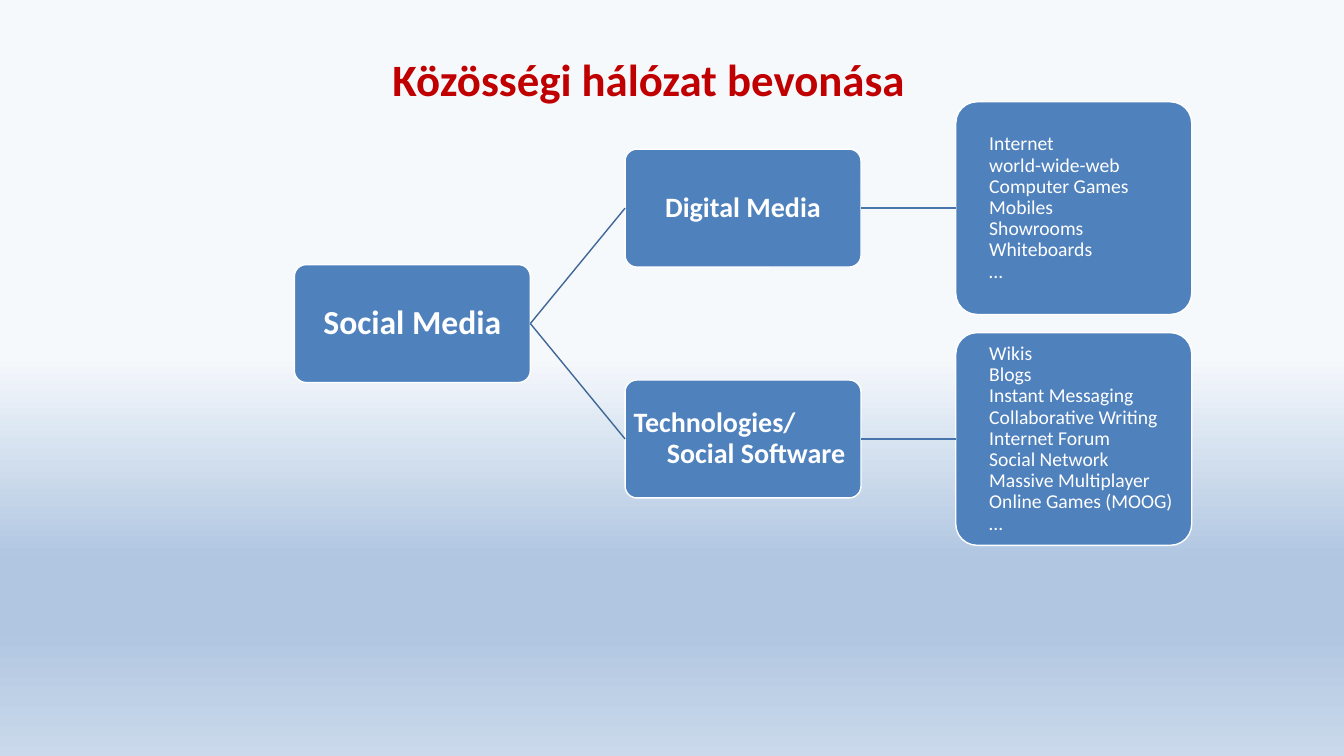
from copy import deepcopy
from dataclasses import dataclass

from lxml import etree
from pptx import Presentation
from pptx.dml.color import RGBColor
from pptx.enum.shapes import MSO_CONNECTOR, MSO_SHAPE
from pptx.enum.text import MSO_ANCHOR, PP_ALIGN
from pptx.oxml.ns import qn
from pptx.shapes.autoshape import Shape
from pptx.slide import Slide
from pptx.text.text import _Paragraph as Paragraph
from pptx.util import Inches, Pt

FONT = "Calibri"
COLORS = {
    "title": "C00000",
    "box": "4F81BD",
    "white": "FFFFFF",
    "branch": "3F6797",
    "leaf": "4875AC",
}
BACKGROUND = ((0.47, "F6F9FC"), (0.74, "B0C6E1"), (0.83, "B0C6E1"), (1, "CAD9EB"))

LEFT, COLUMN = 2.92, 3.28
MIDDLE, ROW = 3.21, 1.145
BOX_W, BOX_H, LIST_H = 2.34, 1.17, 2.11


@dataclass(frozen=True)
class Node:
    name: str
    column: int
    row: int
    lines: tuple[str, ...]
    size: int
    parent: str = ""
    height: float = BOX_H
    bold: bool = True
    indents: tuple[float, ...] = ()


NODES = (
    Node("root", 0, 0, ("Social Media",), 24),
    Node("digital", 1, -1, ("Digital Media",), 20, "root"),
    Node("software", 1, 1, ("Technologies/", "Social Software"), 20, "root",
         indents=(0, 0.33)),
    Node("digital list", 2, -1,
         ("Internet\vworld-wide-web\vComputer Games\vMobiles\vShowrooms\v"
          "Whiteboards\v…",),
         14, "digital", LIST_H, False, (0.2,)),
    Node("software list", 2, 1,
         ("Wikis\vBlogs\vInstant Messaging\vCollaborative Writing\v"
          "Internet Forum\vSocial Network\v"
          "Massive Multiplayer Online Games (MOOG)\v…",),
         14, "software", LIST_H, False, (0.2,)),
)


def rgb(name: str) -> RGBColor:
    return RGBColor.from_string(COLORS[name])


def style(p: Paragraph, size: int, color: str, bold: bool) -> None:
    p.line_spacing = 0.9
    p.font.name = FONT
    p.font.size = Pt(size)
    p.font.bold = bold
    p.font.color.rgb = rgb(color)


def paint_background(s: Slide) -> None:
    fill = s.background.fill
    fill.gradient()
    fill.gradient_angle = 270
    stops = next(s.element.iter(qn("a:gsLst")))
    while len(stops) < len(BACKGROUND):
        stops.append(deepcopy(stops[0]))
    for stop, (position, color) in zip(fill.gradient_stops, BACKGROUND):
        stop.position = position
        stop.color.rgb = RGBColor.from_string(color)


def add_title(s: Slide, text: str) -> None:
    sp = s.shapes.title
    sp.left, sp.top, sp.width, sp.height = map(Inches, (0.92, 0.19, 11.03, 1.25))
    tf = sp.text_frame
    tf.vertical_anchor = MSO_ANCHOR.MIDDLE
    p = tf.paragraphs[0]
    p.text = text
    p.alignment = PP_ALIGN.CENTER
    style(p, 32, "title", True)


def add_node(s: Slide, node: Node) -> Shape:
    sp = s.shapes.add_shape(
        MSO_SHAPE.ROUNDED_RECTANGLE,
        Inches(LEFT + node.column * COLUMN),
        Inches(MIDDLE + node.row * ROW - node.height / 2),
        Inches(BOX_W), Inches(node.height))
    sp.adjustments[0] = 0.1
    sp.shadow.inherit = False
    sp.fill.solid()
    sp.fill.fore_color.rgb = rgb("box")
    sp.line.color.rgb = rgb("white")
    sp.line.width = Pt(1)
    tf = sp.text_frame
    tf.word_wrap = True
    tf.vertical_anchor = MSO_ANCHOR.MIDDLE
    tf.margin_left = tf.margin_right = Inches(0.07 if node.column == 2 else 0.05)
    tf.margin_top = tf.margin_bottom = Inches(0.05)
    for i, line in enumerate(node.lines):
        p = tf.add_paragraph() if i else tf.paragraphs[0]
        p.text = line
        p.alignment = PP_ALIGN.LEFT if node.indents else PP_ALIGN.CENTER
        if node.indents:
            p._p.get_or_add_pPr().set("marL", str(Inches(node.indents[i])))
        style(p, node.size, "white", node.bold)
    return sp


def join(s: Slide, parent: Shape, child: Shape, color: str) -> None:
    line = s.shapes.add_connector(MSO_CONNECTOR.STRAIGHT, 0, 0, 0, 0)
    line.begin_connect(parent, 3)
    line.end_connect(child, 1)
    line.line.color.rgb = rgb(color)
    line.line.width = Pt(1)
    etree.SubElement(line._element.spPr, qn("a:effectLst"))


def main() -> None:
    prs = Presentation()
    prs.slide_width, prs.slide_height = Inches(13.33), Inches(7.5)
    s = prs.slides.add_slide(prs.slide_layouts[5])
    paint_background(s)
    add_title(s, "Közösségi hálózat bevonása")
    boxes: dict[str, Shape] = {}
    for node in NODES:
        boxes[node.name] = add_node(s, node)
        if node.parent:
            color = "branch" if node.column == 1 else "leaf"
            join(s, boxes[node.parent], boxes[node.name], color)
    prs.save("out.pptx")


if __name__ == "__main__":
    main()
